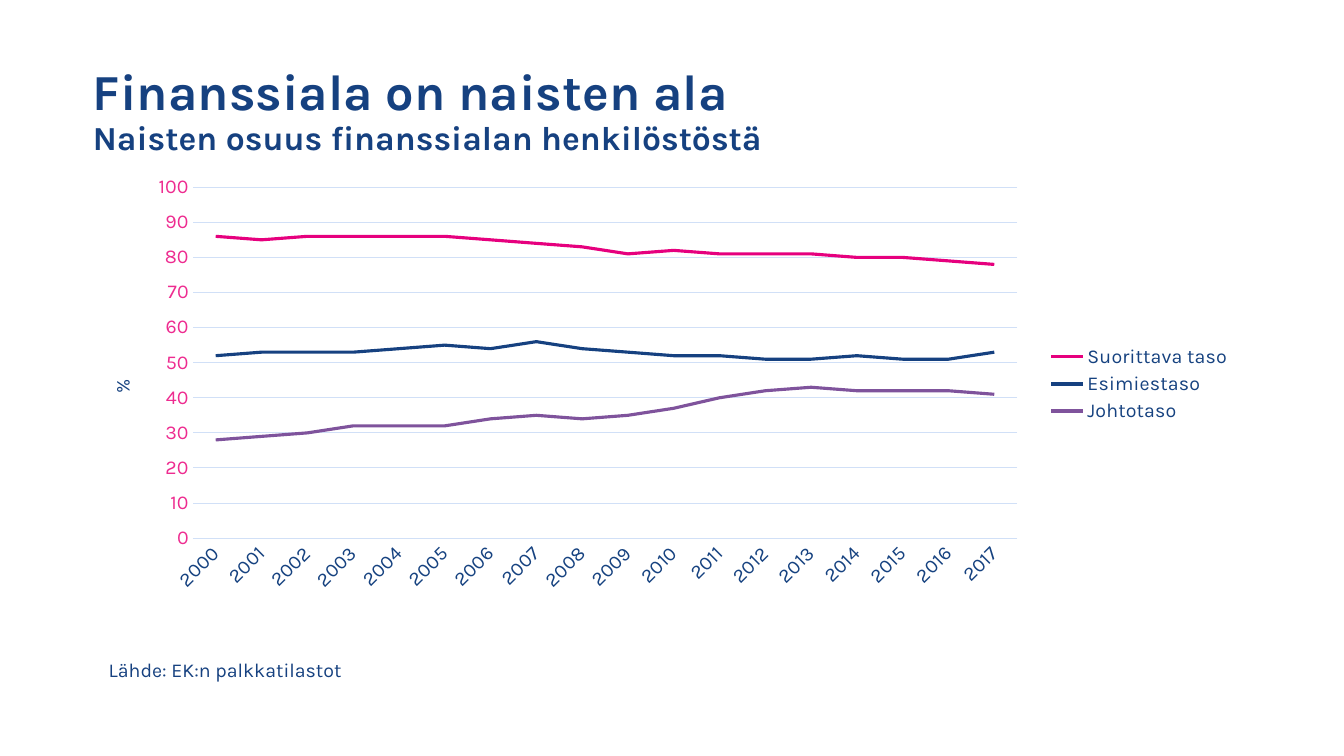
from lxml import etree
from pptx import Presentation
from pptx.chart.data import CategoryChartData
from pptx.dml.color import RGBColor
from pptx.enum.chart import XL_CHART_TYPE, XL_LEGEND_POSITION, XL_TICK_MARK
from pptx.enum.text import MSO_ANCHOR, PP_ALIGN
from pptx.oxml.ns import qn
from pptx.util import Inches, Pt

LINE = XL_CHART_TYPE.LINE
LEGEND_RIGHT = XL_LEGEND_POSITION.RIGHT
NO_TICKS = XL_TICK_MARK.NONE
MIDDLE = MSO_ANCHOR.MIDDLE
LEFT = PP_ALIGN.LEFT

NAVY = RGBColor(0x16, 0x41, 0x80)
CHART_NAVY = RGBColor(0x16, 0x42, 0x80)
MAGENTA = RGBColor(0xE6, 0x00, 0x7E)
AXIS_PINK = RGBColor(0xEE, 0x2C, 0x90)
PURPLE = RGBColor(0x7F, 0x53, 0x9C)
PALE_BLUE = RGBColor(0xD1, 0xE0, 0xF7)

YEARS = [str(year) for year in range(2000, 2018)]
STAFF_LEVELS = [
    ("Suorittava taso", MAGENTA,
     (86, 85, 86, 86, 86, 86, 85, 84, 83, 81, 82, 81, 81, 81, 80, 80, 79, 78)),
    ("Esimiestaso", NAVY,
     (52, 53, 53, 53, 54, 55, 54, 56, 54, 53, 52, 52, 51, 51, 52, 51, 51, 53)),
    ("Johtotaso", PURPLE,
     (28, 29, 30, 32, 32, 32, 34, 35, 34, 35, 37, 40, 42, 43, 42, 42, 42, 41)),
]


def set_layout(parent, index, **settings):
    for layout in parent.findall(qn("c:layout")):
        parent.remove(layout)
    layout = etree.Element(qn("c:layout"))
    manual = etree.SubElement(layout, qn("c:manualLayout"))
    for name, value in settings.items():
        etree.SubElement(manual, qn(f"c:{name}")).set("val", str(value))
    parent.insert(index, layout)


def rotate_text(parent, degrees):
    body = next(parent.iter(qn("a:bodyPr")))
    body.set("rot", str(degrees * 60000))
    body.set("vert", "horz")


class SlideBuilder:
    font_name = "Karla"
    body_size = 14

    def __init__(self, slide):
        self.slide = slide

    def style(self, font, color, size=body_size, bold=False):
        font.name = self.font_name
        font.size = Pt(size)
        font.bold = bold
        font.color.rgb = color

    def title(self, heading, subheading, left, top, width, height):
        shape = self.slide.shapes.title
        shape.left, shape.top = Inches(left), Inches(top)
        shape.width, shape.height = Inches(width), Inches(height)
        frame = shape.text_frame
        frame.text = f"{heading}\v{subheading}"
        frame.word_wrap = True
        frame.vertical_anchor = MIDDLE
        paragraph = frame.paragraphs[0]
        paragraph.alignment = LEFT
        paragraph.line_spacing = 0.9
        for run, size in zip(paragraph.runs, (36, 24)):
            self.style(run.font, NAVY, size, bold=True)

    def text(self, words, left, top, width, height):
        box = self.slide.shapes.add_textbox(
            Inches(left), Inches(top), Inches(width), Inches(height))
        box.text_frame.text = words
        box.text_frame.word_wrap = True
        self.style(box.text_frame.paragraphs[0].runs[0].font, NAVY)

    def line_chart(self, categories, levels, unit, left, top, width, height):
        data = CategoryChartData(number_format="0")
        data.categories = categories
        for name, _, values in levels:
            data.add_series(name, values)
        chart = self.slide.shapes.add_chart(
            LINE, Inches(left), Inches(top), Inches(width), Inches(height), data).chart
        self.style(chart.font, CHART_NAVY)
        chart.has_title = False
        chart.has_legend = True
        chart.legend.position = LEGEND_RIGHT
        chart.legend.include_in_layout = False
        self.style(chart.legend.font, CHART_NAVY)

        plot = chart.plots[0]
        plot.vary_by_categories = False
        for series, (_, color, _) in zip(plot.series, levels):
            series.smooth = False
            series.format.line.color.rgb = color
            series.format.line.width = Pt(2.25)

        self.chart_axes(chart, unit)
        plot_area = next(chart._chartSpace.iter(qn("c:plotArea")))
        set_layout(plot_area, 0, layoutTarget="inner", xMode="edge", yMode="edge",
                   x=0.095, y=0.046, w=0.711, h=0.81)
        rotate_text(plot_area.find(qn("c:catAx")).find(qn("c:txPr")), -45)

    def chart_axes(self, chart, unit):
        years, share = chart.category_axis, chart.value_axis
        for axis, color in ((years, CHART_NAVY), (share, AXIS_PINK)):
            axis.major_tick_mark = axis.minor_tick_mark = NO_TICKS
            self.style(axis.tick_labels.font, color)
        share.minimum_scale, share.maximum_scale, share.major_unit = 0, 100, 10
        share.tick_labels.number_format = "0"
        share.tick_labels.number_format_is_linked = False
        share.has_major_gridlines = True
        share.format.line.fill.background()
        for line in (years.format.line, share.major_gridlines.format.line):
            line.color.rgb = PALE_BLUE
            line.width = Pt(0.75)

        title = share.axis_title
        title.text_frame.text = unit
        self.style(title.text_frame.paragraphs[0].runs[0].font, CHART_NAVY)
        rotate_text(title.element, -90)
        set_layout(title.element, 1, xMode="edge", yMode="edge", x=0.02, y=0.48)


def main():
    presentation = Presentation()
    presentation.slide_width = Inches(13.33)
    presentation.slide_height = Inches(7.5)
    title_only = presentation.slide_layouts[5]
    builder = SlideBuilder(presentation.slides.add_slide(title_only))
    builder.title("Finanssiala on naisten ala", "Naisten osuus finanssialan henkilöstöstä",
                  0.82, 0.39, 11.5, 1.45)
    builder.line_chart(YEARS, STAFF_LEVELS, "%", 0.82, 1.66, 11.5, 4.3)
    builder.text("Lähde: EK:n palkkatilastot", 0.98, 6.48, 3.29, 0.34)
    presentation.save("out.pptx")


if __name__ == "__main__":
    main()
